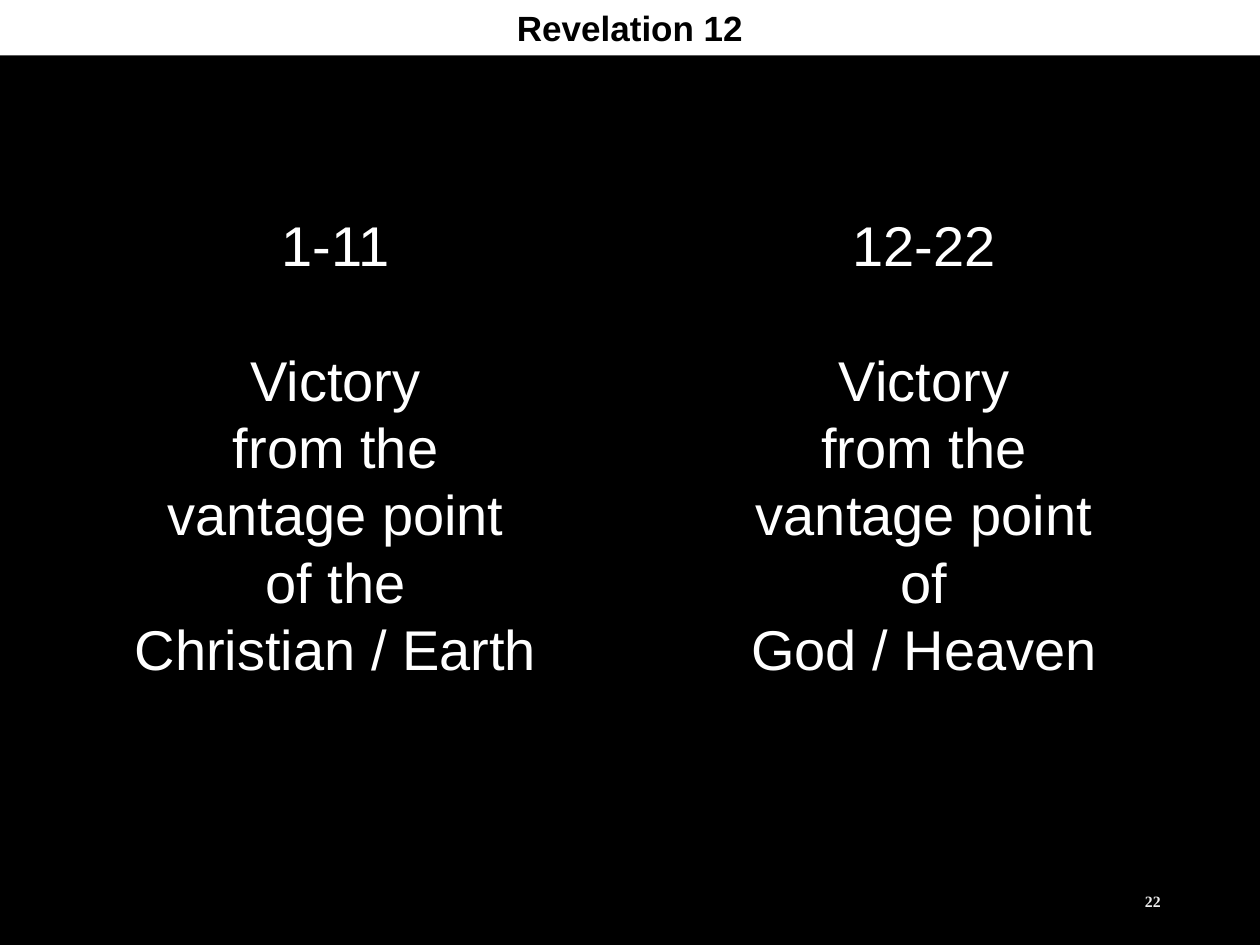
from pptx import Presentation
from pptx.dml.color import RGBColor
from pptx.enum.shapes import MSO_SHAPE
from pptx.enum.text import MSO_ANCHOR, PP_ALIGN
from pptx.util import Inches, Pt

BLACK = RGBColor(0x00, 0x00, 0x00)
WHITE = RGBColor(0xFF, 0xFF, 0xFF)
PALE_GRAY = RGBColor(0xED, 0xED, 0xED)

HEADING = "Revelation 12"
PAGE_NUMBER = "22"
HALVES = [
    ("1-11", ["Victory", "from the", "vantage point", "of the", "Christian / Earth"]),
    ("12-22", ["Victory", "from the", "vantage point", "of", "God / Heaven"]),
]

SLIDE_WIDTH, SLIDE_HEIGHT = 10, 7.5
HALF_WIDTH, HALF_HEIGHT, HALF_TOP = 3.67, 4.92, 1.08
SIDE_MARGIN = 0.83
HALF_STEP = SLIDE_WIDTH - 2 * SIDE_MARGIN - HALF_WIDTH
HALF_LEADING = Pt(38.5)


def write(paragraph, text, size, color, font="Arial", bold=False,
          align=PP_ALIGN.CENTER, leading=None):
    paragraph.alignment = align
    paragraph.line_spacing = leading
    run = paragraph.add_run()
    run.text = text
    run.font.name = font
    run.font.size = Pt(size)
    run.font.bold = bold
    run.font.color.rgb = color


def add_heading(slide):
    heading = slide.shapes.title
    heading.left, heading.top = Inches(0), Inches(0)
    heading.width, heading.height = Inches(SLIDE_WIDTH), Inches(0.44)
    heading.fill.solid()
    heading.fill.fore_color.rgb = WHITE
    frame = heading.text_frame
    frame.vertical_anchor = MSO_ANCHOR.TOP
    write(frame.paragraphs[0], HEADING, 20, BLACK, bold=True, leading=Pt(24))


def add_half(slide, index, chapters, lines):
    half = slide.shapes.add_shape(
        MSO_SHAPE.RECTANGLE, Inches(SIDE_MARGIN + index * HALF_STEP),
        Inches(HALF_TOP), Inches(HALF_WIDTH), Inches(HALF_HEIGHT))
    half.shadow.inherit = False
    half.fill.solid()
    half.fill.fore_color.rgb = BLACK
    half.line.fill.background()
    frame = half.text_frame
    frame.word_wrap = False
    frame.vertical_anchor = MSO_ANCHOR.MIDDLE
    write(frame.paragraphs[0], chapters, 32, WHITE, leading=HALF_LEADING)
    for number, line in enumerate(lines):
        paragraph = frame.add_paragraph()
        write(paragraph, line, 32, WHITE, leading=HALF_LEADING)
        if number == 0:
            paragraph.space_before = HALF_LEADING


def add_page_number(slide):
    box = slide.shapes.add_textbox(Inches(7.06), Inches(6.95), Inches(2.25), Inches(0.4))
    frame = box.text_frame
    frame.word_wrap = True
    frame.vertical_anchor = MSO_ANCHOR.MIDDLE
    write(frame.paragraphs[0], PAGE_NUMBER, 9, PALE_GRAY, font="Times New Roman",
          bold=True, align=PP_ALIGN.RIGHT)


def main():
    deck = Presentation()
    deck.slide_width, deck.slide_height = Inches(SLIDE_WIDTH), Inches(SLIDE_HEIGHT)
    slide = deck.slides.add_slide(deck.slide_layouts[5])
    slide.background.fill.solid()
    slide.background.fill.fore_color.rgb = BLACK
    add_heading(slide)
    for index, (chapters, lines) in enumerate(HALVES):
        add_half(slide, index, chapters, lines)
    add_page_number(slide)
    deck.save("out.pptx")


if __name__ == "__main__":
    main()
